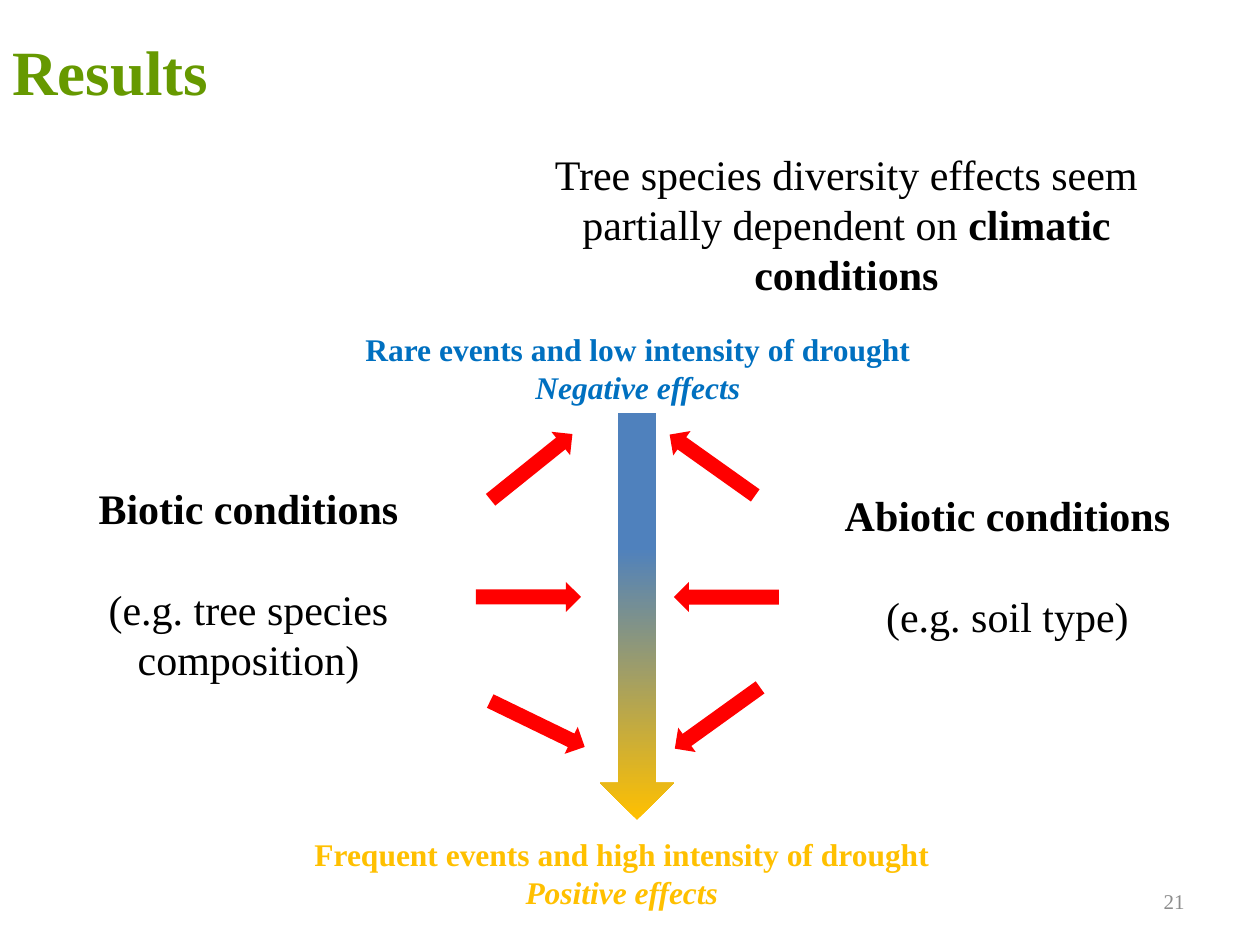
"""Build the Results slide on drought and tree species diversity."""
from copy import deepcopy
from pptx import Presentation
from pptx.dml.color import RGBColor
from pptx.enum import shapes, text
from pptx.oxml.ns import qn
from pptx.util import Emu, Pt

PX = 914400 // 126
FONT = "Times New Roman"
BLACK = RGBColor(0, 0, 0)
BLUE = RGBColor(0x00, 0x70, 0xC0)
STEEL = RGBColor(0x4F, 0x81, 0xBD)
GOLD = RGBColor(0xFF, 0xC0, 0x00)
GREEN = RGBColor(0x66, 0x99, 0x00)
GREY = RGBColor(0x8C, 0x8C, 0x8C)
RED = RGBColor(0xFF, 0, 0)
LEFT, MID, RIGHT = (text.PP_ALIGN.LEFT, text.PP_ALIGN.CENTER,
                    text.PP_ALIGN.RIGHT)
TOP, MIDDLE = text.MSO_ANCHOR.TOP, text.MSO_ANCHOR.MIDDLE
BOLD, ITAL, PLAIN = {"bold": True}, {"bold": True, "italic": True}, {}

# box, size, colour, wrap, anchor, gap before later lines, lines
TEXTS = [
    ((476, 142, 741, 115), 24, BLACK, True, TOP, 0,
     [(MID, [("Tree species diversity effects seem partially dependent on ",
              PLAIN), ("climatic conditions", BOLD)])]),
    ((353, 324, 576, 89), 18, BLUE, False, TOP, 0,
     [(LEFT, [("Rare events and low intensity of drought", BOLD)]),
      (MID, [("Negative effects", ITAL)])]),
    ((302, 829, 650, 89), 18, GOLD, False, TOP, 0,
     [(LEFT, [("Frequent events and high intensity of drought", BOLD)]),
      (MID, [("Positive effects", ITAL)])]),
    ((903, 876, 294, 50), 12, GREY, True, MIDDLE, 0,
     [(RIGHT, [("21", PLAIN)])]),
    ((772, 483, 471, 267), 24, BLACK, True, TOP, 29,
     [(MID, [("Abiotic conditions", BOLD)]),
      (MID, [("(e.g. soil type)", PLAIN)])]),
    ((13, 476, 471, 318), 24, BLACK, True, TOP, 29,
     [(MID, [("Biotic conditions", BOLD)]),
      (MID, [("(e.g. tree species composition)", PLAIN)])]),
    ((0, 26, 223, 89), 36, GREEN, False, TOP, 0,
     [(LEFT, [("Results", BOLD)])]),
]
DROUGHT = (600, 413, 74, 407)
STOPS = [(0, GOLD), (0.67, STEEL), (1, STEEL)]
SIZE = (105, 30)
ARROWS = [(476, 582, 0), (674, 582, 180), (479, 452, 321.2),
          (485, 709, 25.9), (665, 703, 144.3), (660, 450, 215.4)]


def scale(box):
    return [Emu(n * PX) for n in box]


def write(slide, box, size, color, wrap, anchor, gap, lines):
    frame = slide.shapes.add_textbox(*scale(box)).text_frame
    frame.word_wrap, frame.vertical_anchor = wrap, anchor
    for i, (align, runs) in enumerate(lines):
        para = frame.add_paragraph() if i else frame.paragraphs[0]
        para.alignment = align
        if i and gap:
            para.space_before = Pt(gap)
        for words, style in runs:
            run = para.add_run()
            run.text = words
            run.font.color.rgb = color
            look = {"name": FONT, "size": Pt(size), **style}
            for key, value in look.items():
                setattr(run.font, key, value)


def arrow(slide, kind, box, turn=0):
    shape = slide.shapes.add_shape(kind, *scale(box))
    shape.shadow.inherit = False
    shape.line.fill.background()
    shape.rotation = turn
    return shape


def blend(shape):
    fill = shape.fill
    fill.gradient()
    fill.gradient_angle = 90
    group = next(shape.element.spPr.iter(qn("a:gsLst")))
    group.append(deepcopy(group[-1]))
    for stop, (place, color) in zip(fill.gradient_stops, STOPS):
        stop.position, stop.color.rgb = place, color


def main():
    deck = Presentation()
    deck.slide_width, deck.slide_height = scale((1260, 945))
    slide = deck.slides.add_slide(deck.slide_layouts[6])
    for item in TEXTS:
        write(slide, *item)
    blend(arrow(slide, shapes.MSO_SHAPE.DOWN_ARROW, DROUGHT))
    for x, y, turn in ARROWS:
        small = arrow(slide, shapes.MSO_SHAPE.RIGHT_ARROW, (x, y, *SIZE), turn)
        small.fill.solid()
        small.fill.fore_color.rgb = RED
    deck.save("out.pptx")


if __name__ == "__main__":
    main()
